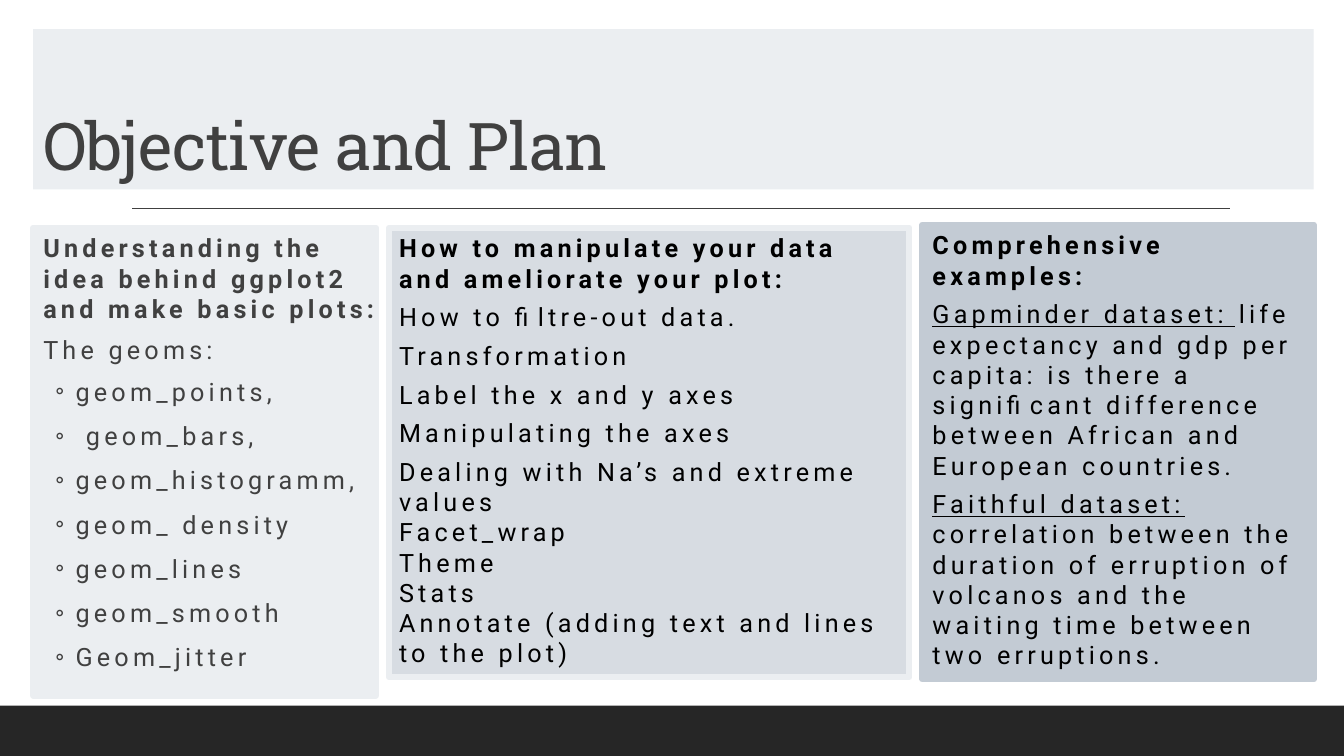
from dataclasses import dataclass

from lxml.etree import SubElement
from pptx import Presentation
from pptx.dml.color import RGBColor
from pptx.enum.shapes import MSO_CONNECTOR as Connector, MSO_SHAPE as Shape
from pptx.enum.text import MSO_ANCHOR as Anchor, PP_ALIGN as Align
from pptx.oxml.ns import qn
from pptx.util import Inches, Pt


@dataclass(frozen=True)
class Theme:
    title_font: str = "Roboto Slab"
    body_font: str = "Roboto"
    bullet_font: str = "Calibri"
    title_size: float = 47
    body_size: float = 18
    title_tracking: float = -0.5
    body_tracking: float = 3
    grey: str = "404040"
    black: str = "000000"
    footer: str = "262626"
    pale: str = "EBEEF1"
    middle: str = "D7DCE2"
    deep: str = "C3CBD4"


THEME = Theme()

GEOMS = ["geom_points,", " geom_bars,", "geom_histogramm,", "geom_ density",
         "geom_lines", "geom_smooth", "Geom_jitter"]
SPACED_STEPS = ["How to filtre-out data.", "Transformation", "Label the x and y axes",
                "Manipulating the axes", "Dealing with Na’s and extreme values"]
TIGHT_STEPS = ["Facet_wrap", "Theme", "Stats",
               "Annotate (adding text and lines to the plot)"]
DATASETS = [
    ("Gapminder dataset: ",
     "life expectancy and gdp per capita: is there a significant difference "
     "between African and European countries."),
    ("Faithful dataset: ",
     "correlation between the duration of erruption of volcanos and the "
     "waiting time between two erruptions."),
]


def add_box(page, left, top, width, height, fill, line=None, side_inset=0.1,
            anchor=Anchor.TOP):
    box = page.shapes.add_shape(Shape.RECTANGLE, Inches(left), Inches(top),
                                Inches(width), Inches(height))
    box.shadow.inherit = False
    box.fill.solid()
    box.fill.fore_color.rgb = RGBColor.from_string(fill)
    if line:
        box.line.color.rgb = RGBColor.from_string(line)
        box.line.width = Pt(4.5)
    else:
        box.line.fill.background()
    frame = box.text_frame
    frame.word_wrap = True
    frame.vertical_anchor = anchor
    frame.margin_left = frame.margin_right = Inches(side_inset)
    frame.margin_top = frame.margin_bottom = Inches(0.05)
    return box


def add_rule(page, left, right, top):
    rule = page.shapes.add_connector(Connector.STRAIGHT, Inches(left), Inches(top),
                                     Inches(right), Inches(top))
    rule.line.color.rgb = RGBColor.from_string(THEME.grey)
    rule.line.width = Pt(1)
    SubElement(rule._element.spPr, qn("a:effectLst"))


def add_para(box, before=0, after=0, margin=0, hanging=0, bullet=None):
    frame = box.text_frame
    first = frame.paragraphs[0]
    para = frame.add_paragraph() if first.runs else first
    para.alignment = Align.LEFT
    para.space_before = Pt(before)
    para.space_after = Pt(after)
    properties = para._p.get_or_add_pPr()
    properties.set("marL", str(Inches(margin)))
    properties.set("indent", str(-Inches(hanging)))
    if bullet:
        SubElement(properties, qn("a:buFont")).set("typeface", THEME.bullet_font)
        SubElement(properties, qn("a:buChar")).set("char", bullet)
    return para


def add_run(para, text, color, size=THEME.body_size, font=THEME.body_font,
            tracking=THEME.body_tracking, bold=False, underline=False):
    run = para.add_run()
    run.text = text
    run.font.name = font
    run.font.size = Pt(size)
    run.font.bold = bold
    run.font.underline = underline
    run.font.color.rgb = RGBColor.from_string(color)
    run.font._element.set("spc", str(int(tracking * 100)))


def add_title(page, text):
    box = add_box(page, 0.33, 0.29, 12.7, 1.59, THEME.pale, anchor=Anchor.BOTTOM)
    para = add_para(box)
    para.line_spacing = 0.9
    add_run(para, text, THEME.grey, THEME.title_size, THEME.title_font,
            THEME.title_tracking)


def add_basics_panel(page):
    box = add_box(page, 0.33, 2.26, 3.4, 4.64, THEME.pale, THEME.pale, side_inset=0)
    heading = add_para(box, 6, 2, margin=0.1)
    add_run(heading, "Understanding the idea behind ggplot2 and make basic plots:",
            THEME.grey, bold=True)
    add_run(add_para(box, 6, 2, margin=0.1), "The geoms:", THEME.grey)
    for geom in GEOMS:
        add_run(add_para(box, 6, 4, 0.42, 0.2, "◦"), geom, THEME.grey)


def add_steps_panel(page):
    box = add_box(page, 3.86, 2.26, 5.16, 4.46, THEME.middle, THEME.pale)
    add_run(add_para(box, 6), "How to manipulate your data and ameliorate your plot:",
            THEME.black, bold=True)
    for steps, before in ((SPACED_STEPS, 6), (TIGHT_STEPS, 0)):
        for step in steps:
            add_run(add_para(box, before), step, THEME.black)


def add_examples_panel(page):
    box = add_box(page, 9.15, 2.23, 3.88, 4.51, THEME.deep, THEME.deep)
    add_run(add_para(box, 6), "Comprehensive examples:", THEME.black, bold=True)
    for name, question in DATASETS:
        para = add_para(box, 6)
        add_run(para, name, THEME.black, underline=True)
        add_run(para, question, THEME.black)


def main():
    deck = Presentation()
    deck.slide_width = Inches(13.33)
    deck.slide_height = Inches(7.5)
    page = deck.slides.add_slide(deck.slide_layouts[6])
    add_box(page, 0, 7, 13.33, 0.5, THEME.footer)
    add_rule(page, 1.31, 12.2, 2.07)
    add_title(page, "Objective and Plan")
    add_basics_panel(page)
    add_steps_panel(page)
    add_examples_panel(page)
    deck.save("out.pptx")


if __name__ == "__main__":
    main()
